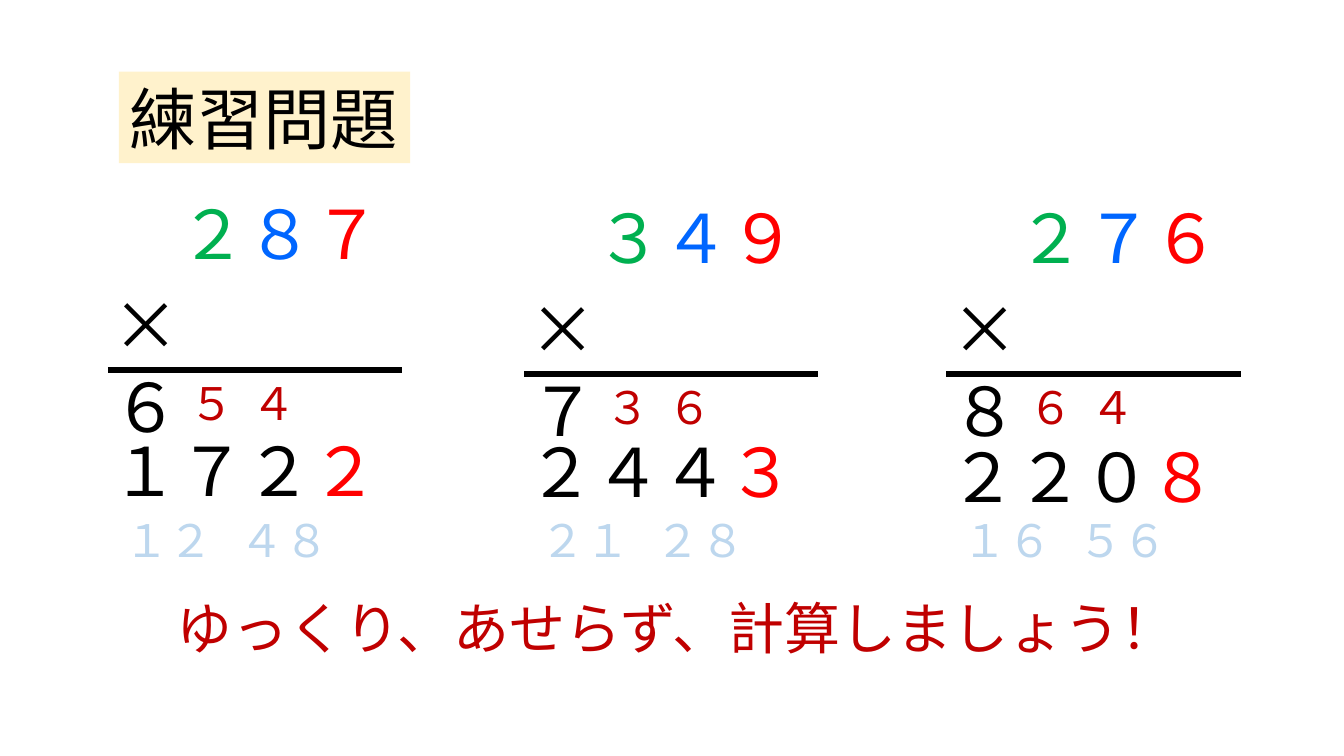
from lxml.etree import SubElement as Sub
from pptx import Presentation
from pptx.dml.color import RGBColor as RGB
from pptx.enum.shapes import MSO_CONNECTOR as Link
from pptx.enum.text import MSO_ANCHOR as Anchor, MSO_AUTO_SIZE as Fit, PP_ALIGN as Align
from pptx.oxml.ns import qn
from pptx.util import Inches, Pt

FONT = "Noto Sans CJK JP"
HUES = {
    "ink": "000000", "red": "FF0000", "blue": "0066FF", "green": "00B050",
    "dark": "C00000", "pale": "BDD7EE", "cream": "FFF2CC",
}
WIDE, HIGH = Inches(13.33), Inches(7.5)
COL, ROW = WIDE / 40, HIGH / 30
BIG, MID, SMALL = 48, 40, 32
TALL, LOW = 3.64, 2.56

# left column, top row of the sign, row of the product,
# number, multiplier, carries, product, partial products
SUMS = [
    (3.06, 11.04, 16.8, "２８７", "６", "５４", "１７２２", ("１２", "４８")),
    (15.45, 11.2, 16.84, "３４９", "７", "３６", "２４４３", ("２１", "２８")),
    (28.02, 11.2, 17.04, "２７６", "８", "６４", "２２０８", ("１６", "５６")),
]


def hue(name):
    return RGB.from_string(HUES[name])


def grid(x, y, *rest):
    """Turn column and row pairs into slide lengths."""
    return [round(n * unit) for n, unit in zip((x, y, *rest), (COL, ROW) * 2)]


def write(frame, text, size, *hues):
    """Fill a frame; several hues colour one character each."""
    frame.vertical_anchor = Anchor.TOP
    frame.auto_size = Fit.NONE
    para = frame.paragraphs[0]
    para.alignment = Align.LEFT
    para.line_spacing = Pt(round(size * 1.21))
    para.font.size, para.font.name = Pt(size), FONT
    if len(hues) == 1:
        para.text = text
        para.font.color.rgb = hue(hues[0])
    else:
        for char, name in zip(text, hues):
            run = para.add_run()
            run.text = char
            run.font.color.rgb = hue(name)
    Sub(para.font._element, qn("a:ea"), typeface=FONT)


def label(slide, spot, text, size, *hues):
    frame = slide.shapes.add_textbox(*grid(*spot)).text_frame
    frame.word_wrap = True
    write(frame, text, size, *hues)


def rule(slide, left, right, row):
    line = slide.shapes.add_connector(Link.STRAIGHT, *grid(left, row, right, row))
    line.line.color.rgb = hue("ink")
    line.line.width = Pt(4.5)
    Sub(line._element.spPr, qn("a:effectLst"))


def head(slide, text):
    title = slide.shapes.title
    title.left, title.top, title.width, title.height = grid(3.54, 2.84, 8.67, TALL)
    title.fill.solid()
    title.fill.fore_color.rgb = hue("cream")
    title.text_frame.word_wrap = False
    write(title.text_frame, text, BIG, "ink")


def sum_up(slide, left, top, base, number, times, carry, product, parts):
    """Set out one written multiplication."""
    bar = top + TALL
    label(slide, (left + 1.98, top - TALL, 6.63, TALL), number, BIG,
          "green", "blue", "red")
    label(slide, (left, top, 8.91, TALL), f"×\v{times}", BIG, "ink")
    rule(slide, left + 0.15, left + 8.91, bar)
    for shift, digit in zip((2.28, 4.13), carry):
        label(slide, (left + shift, bar, 1.92, LOW), digit, SMALL, "dark")
    digits = (product[:2], product[2], product[3])
    for shift, width, digit, name in zip(
            (-0.05, 3.94, 5.91), (4.68, 2.4, 2.4), digits, ("ink", "ink", "red")):
        label(slide, (left + shift, base, width, TALL), digit, BIG, name)
    for shift, part in zip((0.34, 3.77), parts):
        label(slide, (left + shift, 20.1, 3.78, LOW), part, SMALL, "pale")


def main():
    deck = Presentation()
    deck.slide_width, deck.slide_height = WIDE, HIGH
    slide = deck.slides.add_slide(deck.slide_layouts[5])
    head(slide, "練習問題")
    for item in SUMS:
        sum_up(slide, *item)
    label(slide, (4.95, 23.36, 31.68, 3.08),
          "ゆっくり、あせらず、計算しましょう！", MID, "dark")
    deck.save("out.pptx")


if __name__ == "__main__":
    main()
